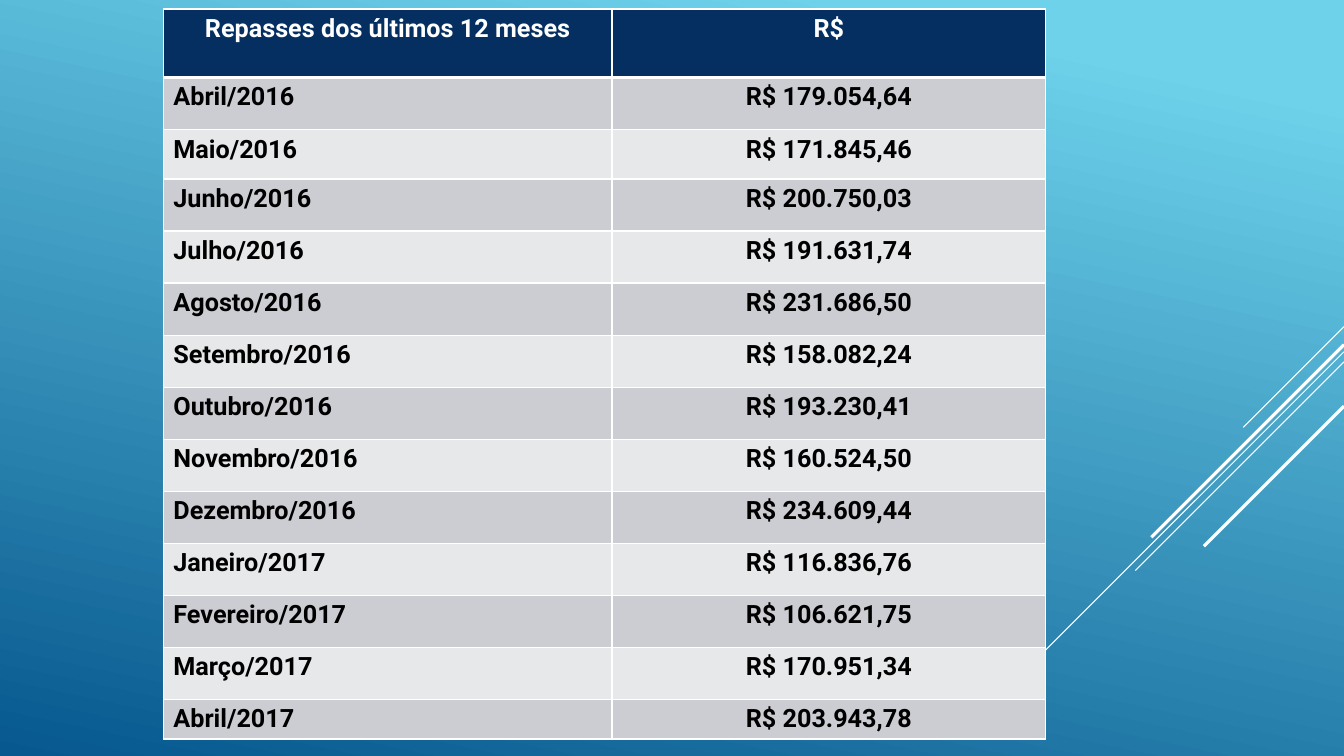
from dataclasses import dataclass

from lxml import etree
from pptx import Presentation
from pptx.dml.color import RGBColor
from pptx.enum.text import MSO_ANCHOR, PP_ALIGN
from pptx.enum.shapes import MSO_CONNECTOR
from pptx.oxml.ns import qn
from pptx.util import Inches, Pt

STRAIGHT = MSO_CONNECTOR.STRAIGHT
TOP = MSO_ANCHOR.TOP
LEFT, CENTER = PP_ALIGN.LEFT, PP_ALIGN.CENTER
BLANK_LAYOUT = 6


@dataclass(frozen=True)
class Theme:
    font: str = "Roboto"
    size: float = 18
    sky: str = "6ED2EB"
    sea: str = "06588E"
    navy: str = "052F61"
    white: str = "FFFFFF"
    black: str = "000000"
    bands: tuple = ("CCCDD2", "E7E8EA")
    thin: float = 1
    thick: float = 3


THEME = Theme()
PAGE_WIDTH, PAGE_HEIGHT = 13.33, 7.5

# Diagonal lines: start height on the right edge, run, weight in points
DIAGONALS = [
    (3.24, 1.0, 0.75),
    (3.49, 3.26, 0.75),
    (3.59, 2.07, 0.75),
    (3.42, 1.91, 2.25),
    (4.03, 1.39, 2.25),
]

HEADINGS = ("Repasses dos últimos 12 meses", "R$")
TRANSFERS = [
    ("Abril/2016", "R$ 179.054,64"),
    ("Maio/2016", "R$ 171.845,46"),
    ("Junho/2016", "R$ 200.750,03"),
    ("Julho/2016", "R$ 191.631,74"),
    ("Agosto/2016", "R$ 231.686,50"),
    ("Setembro/2016", "R$ 158.082,24"),
    ("Outubro/2016", "R$ 193.230,41"),
    ("Novembro/2016", "R$ 160.524,50"),
    ("Dezembro/2016", "R$ 234.609,44"),
    ("Janeiro/2017", "R$ 116.836,76"),
    ("Fevereiro/2017", "R$ 106.621,75"),
    ("Março/2017", "R$ 170.951,34"),
    ("Abril/2017", "R$ 203.943,78"),
]


def rgb(code):
    return RGBColor.from_string(code)


def write_text(frame, text, color=THEME.black, align=LEFT, bold=True):
    para = frame.paragraphs[0]
    para.alignment = align
    span = para.add_run()
    span.text = text
    span.font.name = THEME.font
    span.font.size = Pt(THEME.size)
    span.font.bold = bold
    span.font.color.rgb = rgb(color)


def paint_background(page):
    fill = page.background.fill
    fill.gradient()
    fill.gradient_angle = 360 - 102
    stops = zip(fill.gradient_stops, (THEME.sky, THEME.sea), (0.1, 1))
    for stop, color, position in stops:
        stop.color.rgb = rgb(color)
        stop.position = position


def draw_diagonals(page, right):
    """Lines falling at 45 degrees to the left of the given edge."""
    for top, run, weight in DIAGONALS:
        line = page.shapes.add_connector(
            STRAIGHT, Inches(right), Inches(top),
            Inches(right - run), Inches(top + run))
        line.line.color.rgb = rgb(THEME.white)
        line.line.width = Pt(weight)
        etree.SubElement(line._element.spPr, qn("a:effectLst"))


def set_borders(cell, top, bottom):
    properties = cell._tc.get_or_add_tcPr()
    weights = {"a:lnL": THEME.thin, "a:lnR": THEME.thin,
               "a:lnT": top, "a:lnB": bottom}
    for tag, weight in weights.items():
        edge = etree.SubElement(properties, qn(tag), w=str(Pt(weight)))
        fill = etree.SubElement(edge, qn("a:solidFill"))
        etree.SubElement(fill, qn("a:srgbClr"), val=THEME.white)


def add_transfer_table(page, left, top, width, height):
    rows = [HEADINGS, *TRANSFERS]
    table = page.shapes.add_table(
        len(rows), len(HEADINGS), Inches(left), Inches(top),
        Inches(width), Inches(height)).table

    # Column widths and row heights
    label_width = 4.45
    table.columns[0].width = Inches(label_width)
    table.columns[1].width = Inches(width - label_width)
    special = {0: 0.68, 2: 0.49, len(rows) - 1: 0.39}
    regular = (height - sum(special.values())) / (len(rows) - len(special))
    for index, row in enumerate(table.rows):
        row.height = Inches(special.get(index, regular))

    # Cells: dark heading, then alternating bands
    for index, values in enumerate(rows):
        heading = index == 0
        for column, text in enumerate(values):
            cell = table.cell(index, column)
            set_borders(cell,
                        top=THEME.thick if index == 1 else THEME.thin,
                        bottom=THEME.thick if heading else THEME.thin)
            cell.fill.solid()
            cell.fill.fore_color.rgb = rgb(
                THEME.navy if heading else THEME.bands[(index - 1) % 2])
            cell.vertical_anchor = TOP
            write_text(cell.text_frame, text,
                       color=THEME.white if heading else THEME.black,
                       align=CENTER if heading or column else LEFT)


def main():
    deck = Presentation()
    deck.slide_width = Inches(PAGE_WIDTH)
    deck.slide_height = Inches(PAGE_HEIGHT)
    page = deck.slides.add_slide(deck.slide_layouts[BLANK_LAYOUT])
    paint_background(page)
    draw_diagonals(page, right=PAGE_WIDTH)
    add_transfer_table(page, left=1.62, top=0.09, width=8.75, height=7.24)
    deck.save("out.pptx")


if __name__ == "__main__":
    main()
